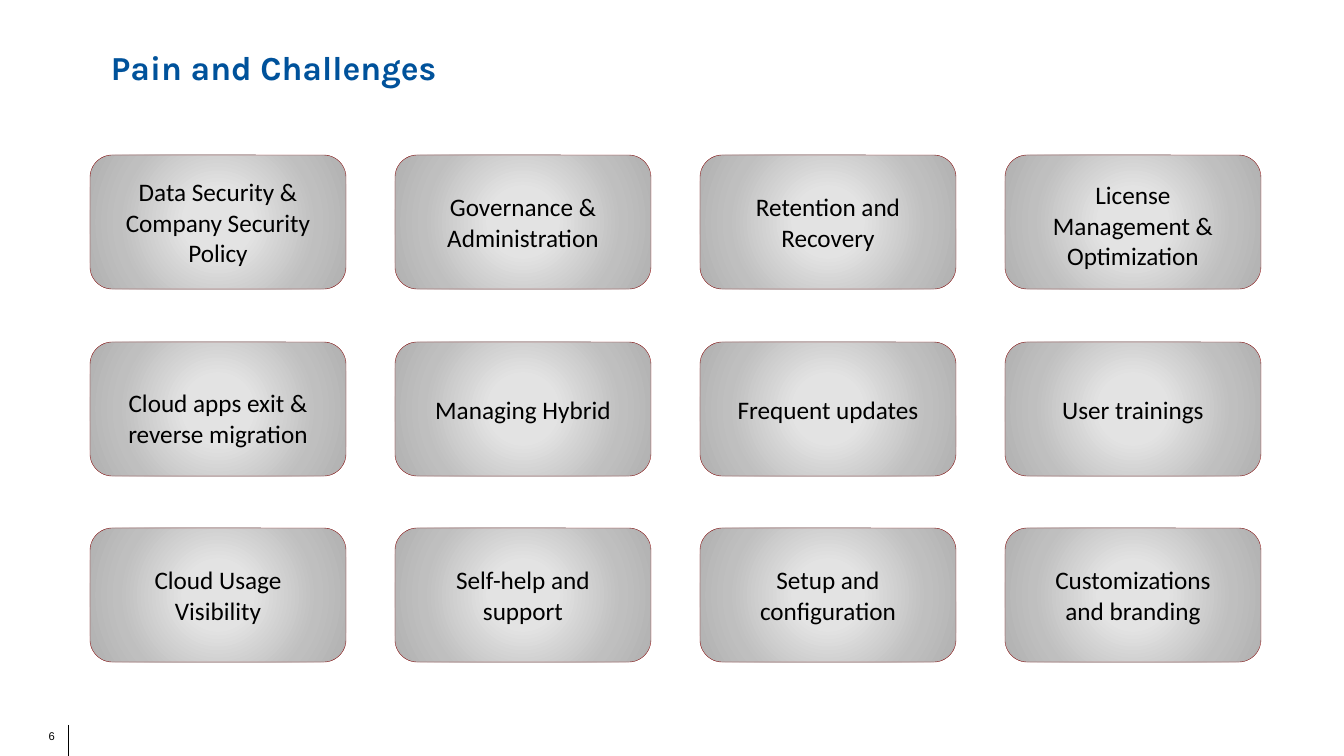
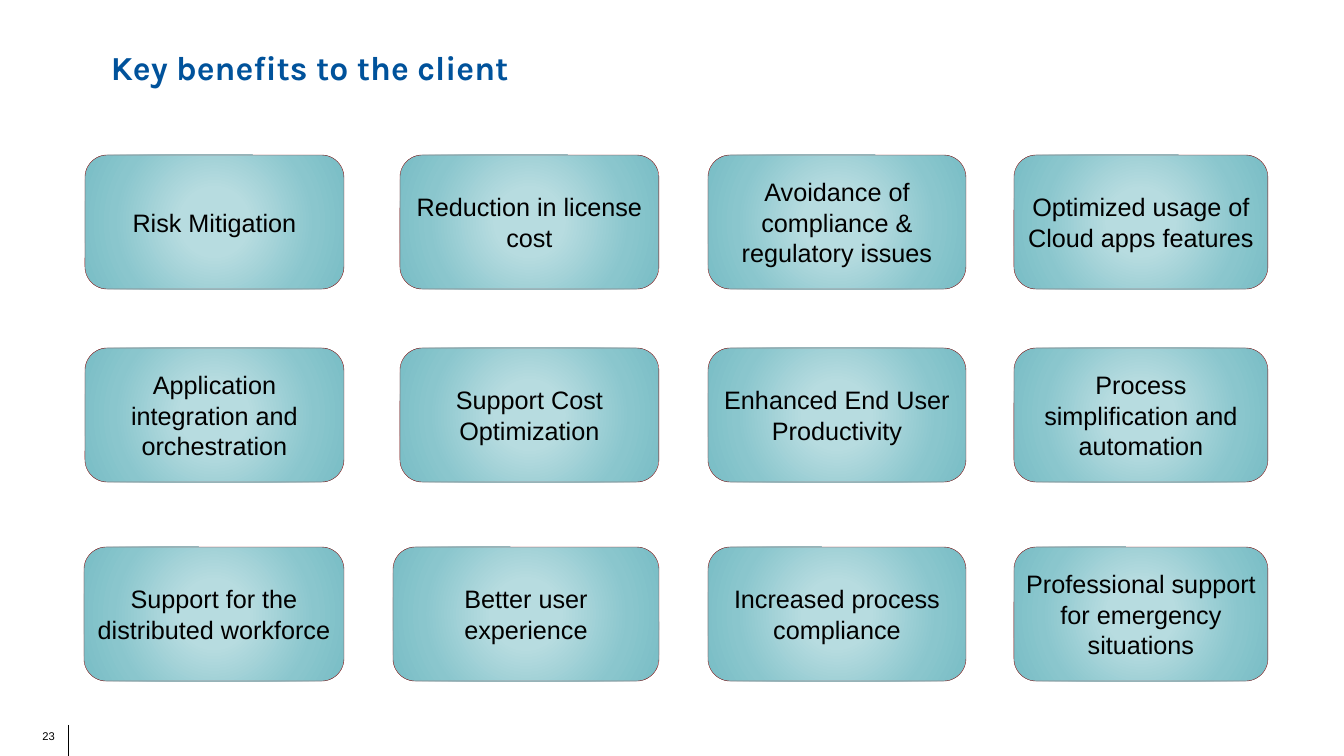
"""Build two card-grid slides: pain points and client benefits."""
from lxml.etree import SubElement
from pptx import Presentation
from pptx.dml.color import RGBColor
from pptx.enum.shapes import MSO_CONNECTOR, MSO_SHAPE
from pptx.enum.text import MSO_ANCHOR, MSO_AUTO_SIZE, PP_ALIGN
from pptx.oxml.ns import qn
from pptx.util import Pt

EMU_PER_PX = 914400 / 100.8
COLOURS = {
    "title": "00529B",
    "text": "000000",
    "outline": "850909",
    "grey": ["E3E3E3", "E3E3E3", "BFBFBF", "B2B2B2"],
    "teal": ["B7DCE0", "B7DCE0", "8AC6CD", "7ABEC6"],
}
STOPS = [0, 23, 69, 97]
CARD_HEIGHT = 134

pain_columns = [(90 + 305 * column, 256) for column in range(4)]
benefit_columns = [(85, 259), (400, 259), (708, 258), (1014, 254)]
last_benefit_columns = [(84, 260), (393, 266)] + benefit_columns[2:]

SLIDES = [
    {
        "title": "Pain and Challenges", "number": "6",
        "font": "Calibri", "shades": "grey", "side_margin": 28,
        "rows": [
            (155, pain_columns, ["Data Security & Company Security Policy",
                                 "Governance & Administration",
                                 "Retention and Recovery",
                                 "License Management & Optimization"]),
            (342, pain_columns, ["Cloud apps exit & reverse migration",
                                 "Managing Hybrid", "Frequent updates",
                                 "User trainings"]),
            (528, pain_columns, ["Cloud Usage Visibility",
                                 "Self-help and support",
                                 "Setup and configuration",
                                 "Customizations and branding"]),
        ],
        "lowered": {"License Management & Optimization": 3,
                    "Cloud apps exit & reverse migration": 9},
    },
    {
        "title": "Key benefits to the client", "number": "23",
        "font": "Arial", "shades": "teal", "side_margin": 4,
        "rows": [
            (155, benefit_columns, ["Risk Mitigation",
                                    "Reduction in license cost",
                                    "Avoidance of compliance & regulatory issues",
                                    "Optimized usage of Cloud apps features"]),
            (348, benefit_columns, ["Application integration and orchestration",
                                    "Support Cost Optimization",
                                    "Enhanced End User Productivity",
                                    "Process simplification and automation"]),
            (547, last_benefit_columns, ["Support for the distributed workforce",
                                         "Better user experience",
                                         "Increased process compliance",
                                         "Professional support for emergency situations"]),
        ],
        "lowered": {},
    },
]


def px(*lengths):
    """Turn pixel lengths into EMU."""
    return [round(length * EMU_PER_PX) for length in lengths]


def write(frame, text, font, size, colour, align, margins, anchor):
    """Fill a text frame with one formatted run."""
    frame.word_wrap = True
    frame.auto_size = MSO_AUTO_SIZE.NONE
    frame.vertical_anchor = anchor
    (frame.margin_left, frame.margin_top,
     frame.margin_right, frame.margin_bottom) = px(*margins)
    paragraph = frame.paragraphs[0]
    paragraph.alignment = align
    run = paragraph.add_run()
    run.text = text
    run.font.name = font
    run.font.size = Pt(size)
    run.font.color.rgb = RGBColor.from_string(COLOURS[colour])
    return paragraph


prs = Presentation()
prs.slide_width, prs.slide_height = px(1344, 756)

for content in SLIDES:
    slide = prs.slides.add_slide(prs.slide_layouts[5])

    title = slide.shapes.title
    title.left, title.top, title.width, title.height = px(0, 2, 1156, 83)
    heading = write(title.text_frame, content["title"], "Karla", 24, "title",
                    PP_ALIGN.LEFT, (111, 5, 10, 5), MSO_ANCHOR.TOP)
    heading.line_spacing = 2.0
    heading.runs[0].font.bold = True

    divider = slide.shapes.add_connector(MSO_CONNECTOR.STRAIGHT, *px(69, 725, 69, 756))
    divider.line.color.rgb = RGBColor.from_string(COLOURS["text"])
    divider.line.width = Pt(0.75)
    SubElement(divider._element.spPr, qn("a:effectLst"))

    page_number = slide.shapes.add_textbox(*px(7, 724, 48, 23))
    write(page_number.text_frame, content["number"], "Arial", 8, "text",
          PP_ALIGN.RIGHT, (10, 5, 0, 5), MSO_ANCHOR.TOP)

    for top, columns, labels in content["rows"]:
        for (left, width), label in zip(columns, labels):
            card = slide.shapes.add_shape(MSO_SHAPE.ROUNDED_RECTANGLE,
                                          *px(left, top, width, CARD_HEIGHT))
            card.shadow.inherit = False
            card.line.color.rgb = RGBColor.from_string(COLOURS["outline"])
            card.line.width = Pt(0.25)

            card.fill.gradient()
            gradient = card._element.spPr.find(qn("a:gradFill"))
            for part in list(gradient):
                gradient.remove(part)
            stops = SubElement(gradient, qn("a:gsLst"))
            for position, shade in zip(STOPS, COLOURS[content["shades"]]):
                stop = SubElement(stops, qn("a:gs"), pos=str(position * 1000))
                SubElement(stop, qn("a:srgbClr"), val=shade)
            circle = SubElement(gradient, qn("a:path"), path="circle")
            SubElement(circle, qn("a:fillToRect"),
                       l="50000", t="50000", r="50000", b="50000")

            side = content["side_margin"]
            lowered = content["lowered"].get(label, 0)
            write(card.text_frame, label, content["font"], 18, "text",
                  PP_ALIGN.CENTER, (side, 5 + 2 * lowered, side, 5), MSO_ANCHOR.MIDDLE)

prs.save("out.pptx")
